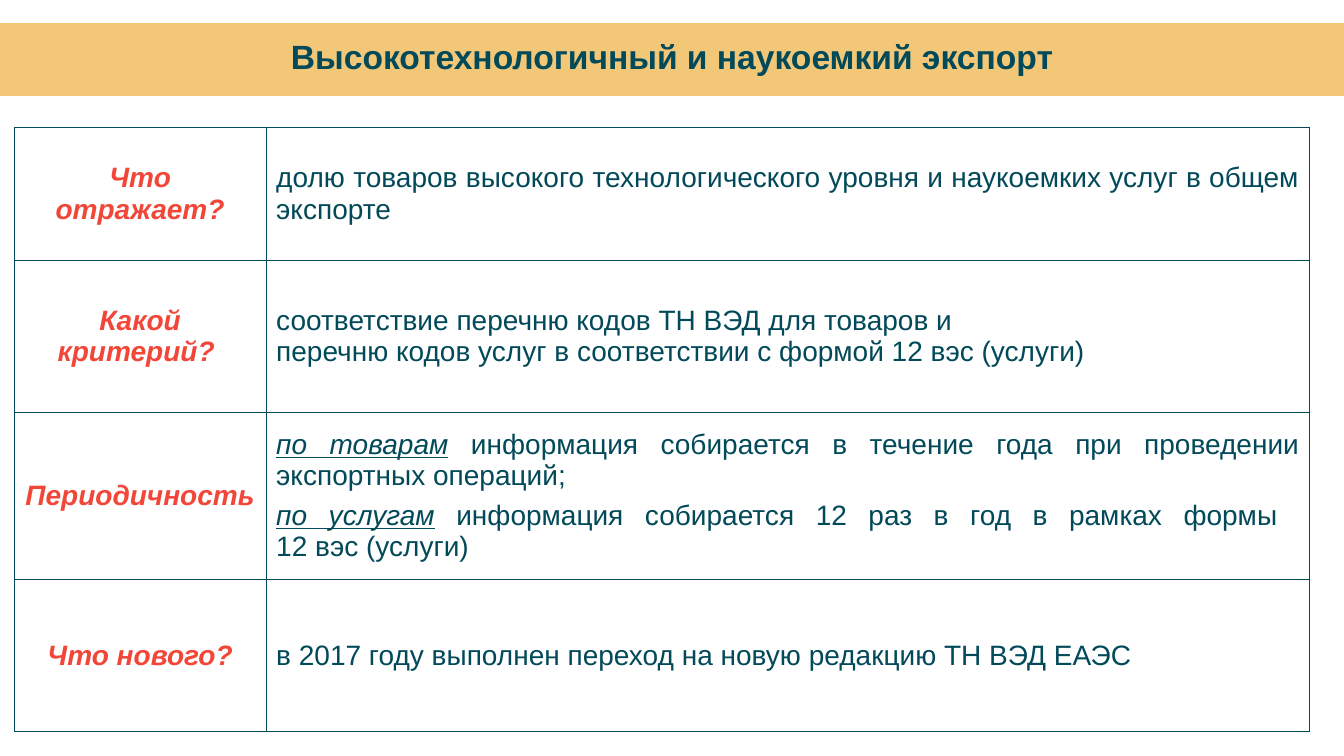
from lxml import etree
from pptx import Presentation
from pptx.dml.color import RGBColor
from pptx.enum.text import MSO_ANCHOR, PP_ALIGN
from pptx.oxml.ns import qn
from pptx.util import Pt

CENTER, JUSTIFY, LEFT = PP_ALIGN.CENTER, PP_ALIGN.JUSTIFY, PP_ALIGN.LEFT
MIDDLE = MSO_ANCHOR.MIDDLE
COLORS = {"band": "F2C777", "text": "024959", "question": "F24738"}
FONT = "Arial"
TITLE_ONLY_LAYOUT = 5

COLUMN_WIDTHS = (180, 745.2)
ROW_HEIGHTS = (95, 108.8, 119, 108.8)

# Each row: question, answer alignment, answer paragraphs.
# A paragraph is a list of (text, underlined) runs; "\n" is a line break.
ROWS = [
    ("Что отражает?", JUSTIFY, [
        [("долю товаров высокого технологического уровня и наукоемких услуг "
          "в общем экспорте", False)],
    ]),
    ("Какой критерий? ", JUSTIFY, [
        [("соответствие перечню кодов ТН ВЭД для товаров и", False)],
        [("перечню кодов услуг в соответствии с формой 12 вэс (услуги)", False)],
    ]),
    ("Периодичность", JUSTIFY, [
        [("по товарам", True),
         (" информация собирается в течение года при проведении "
          "экспортных операций;", False)],
        [("по услугам", True),
         (" информация собирается 12 раз в год в рамках формы \n"
          "12 вэс (услуги)", False)],
    ]),
    ("Что нового?", LEFT, [
        [("в 2017 году выполнен переход на новую редакцию ТН ВЭД ЕАЭС", False)],
    ]),
]


def rgb(name):
    return RGBColor.from_string(COLORS[name])


def add_run(paragraph, text, size, color, bold=False, italic=False, underline=False):
    for index, line in enumerate(text.split("\n")):
        if index:
            paragraph.add_line_break()
        run = paragraph.add_run()
        run.text = line
        font = run.font
        font.name, font.size = FONT, Pt(size)
        font.bold, font.italic, font.underline = bold, italic, underline
        font.color.rgb = rgb(color)


def format_title(title, text):
    title.left, title.top, title.width, title.height = Pt(0), Pt(17.3), Pt(960), Pt(50.4)
    title.fill.solid()
    title.fill.fore_color.rgb = rgb("band")
    title.line.color.rgb = rgb("band")
    title.line.width = Pt(2.25)
    title.text_frame.vertical_anchor = MIDDLE
    paragraph = title.text_frame.paragraphs[0]
    paragraph.alignment = CENTER
    paragraph.line_spacing = Pt(24)
    add_run(paragraph, text, 24, "text", bold=True)


def set_borders(cell):
    properties = cell._tc.get_or_add_tcPr()
    for side in ("a:lnL", "a:lnR", "a:lnT", "a:lnB"):
        line = etree.SubElement(properties, qn(side), w=str(Pt(0.25)))
        fill = etree.SubElement(line, qn("a:solidFill"))
        etree.SubElement(fill, qn("a:srgbClr"), val=COLORS["text"])


def format_cell(cell):
    set_borders(cell)
    cell.fill.background()
    cell.vertical_anchor = MIDDLE


def fill_question(cell, text):
    format_cell(cell)
    paragraph = cell.text_frame.paragraphs[0]
    paragraph.alignment = CENTER
    add_run(paragraph, text, 20, "question", bold=True, italic=True)


def fill_answer(cell, alignment, paragraphs):
    format_cell(cell)
    frame = cell.text_frame
    for index, runs in enumerate(paragraphs):
        paragraph = frame.add_paragraph() if index else frame.paragraphs[0]
        paragraph.alignment = alignment
        if index and len(runs) > 1:
            paragraph.space_before = Pt(6)
        for text, underlined in runs:
            add_run(paragraph, text, 20, "text", italic=underlined, underline=underlined)


def add_question_table(slide):
    frame = slide.shapes.add_table(
        len(ROWS), len(COLUMN_WIDTHS), Pt(10.1), Pt(90.9),
        Pt(sum(COLUMN_WIDTHS)), Pt(sum(ROW_HEIGHTS)))
    table = frame.table
    table.first_row = table.horz_banding = False
    for column, width in zip(table.columns, COLUMN_WIDTHS):
        column.width = Pt(width)
    for index, (question, alignment, paragraphs) in enumerate(ROWS):
        table.rows[index].height = Pt(ROW_HEIGHTS[index])
        fill_question(table.cell(index, 0), question)
        fill_answer(table.cell(index, 1), alignment, paragraphs)


def main():
    presentation = Presentation()
    presentation.slide_width, presentation.slide_height = Pt(960), Pt(540)
    layout = presentation.slide_layouts[TITLE_ONLY_LAYOUT]
    slide = presentation.slides.add_slide(layout)
    format_title(slide.shapes.title, "Высокотехнологичный и наукоемкий экспорт")
    add_question_table(slide)
    presentation.save("out.pptx")


if __name__ == "__main__":
    main()
